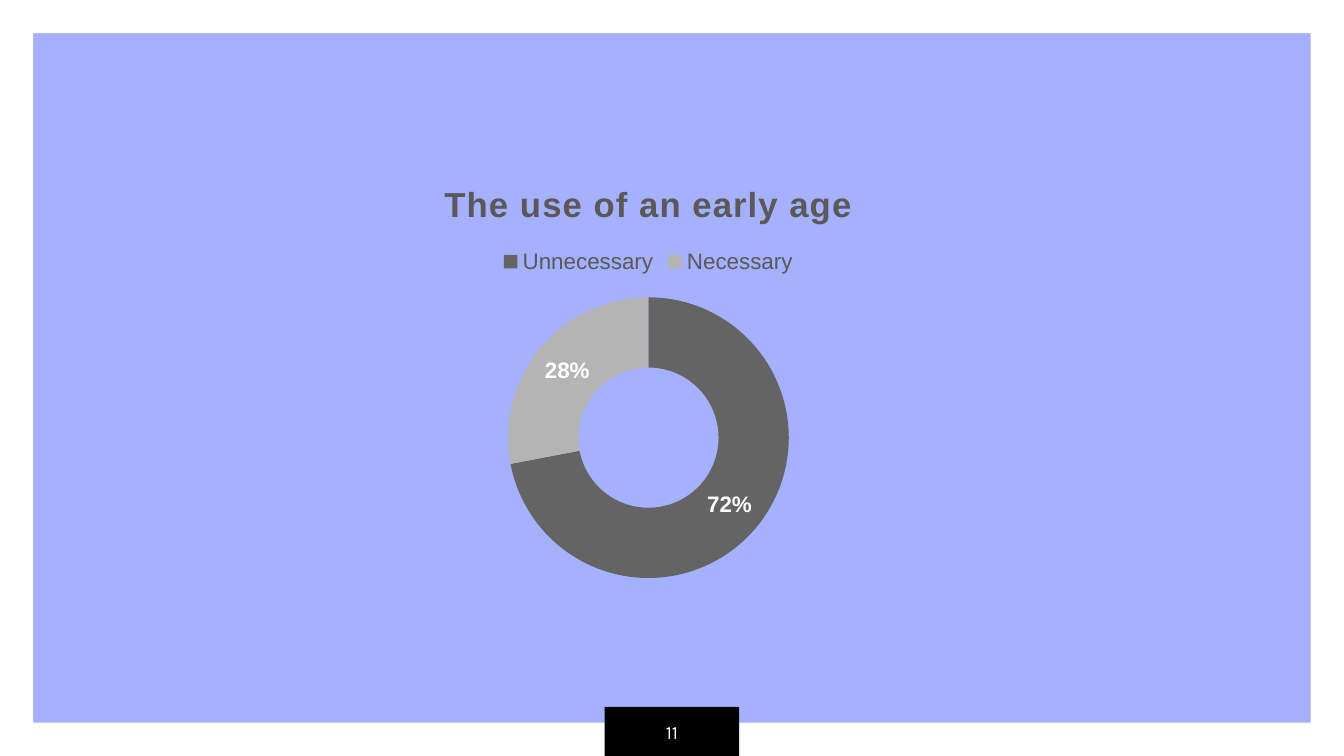
import pptx
import pptx.chart.data
import pptx.dml.color
import pptx.enum.chart
import pptx.enum.shapes
import pptx.enum.text
import pptx.util

Inches = pptx.util.Inches
SHAPES = pptx.enum.shapes.MSO_SHAPE

COLORS = {
    "background": "A5B0FE",
    "white": "FFFFFF",
    "black": "000000",
    "text": "595959",
    "Unnecessary": "646464",
    "Necessary": "B4B4B4",
}
SHARES = {"Unnecessary": 72, "Necessary": 28}
CHART_TITLE = "The use of an early age"
WIDTH = 10
HEIGHT = WIDTH * 9 / 16


def paint(fill, color):
    fill.solid()
    fill.fore_color.rgb = pptx.dml.color.RGBColor.from_string(COLORS[color])


def style_font(font, size, color, bold=False, name="Arial"):
    font.name = name
    font.size = pptx.util.Pt(size)
    font.bold = bold
    font.color.rgb = pptx.dml.color.RGBColor.from_string(COLORS[color])


def add_plain_shape(slide, kind, box, color):
    shape = slide.shapes.add_shape(kind, *map(Inches, box))
    shape.shadow.inherit = False
    paint(shape.fill, color)
    shape.line.fill.background()
    return shape


def add_frame(slide, box):
    frame = add_plain_shape(slide, SHAPES.FRAME, box, "white")
    frame.adjustments[0] = 0.044


def add_page_number(slide, box, number):
    add_plain_shape(slide, SHAPES.RECTANGLE, box, "black")
    text_frame = slide.shapes.add_textbox(*map(Inches, box)).text_frame
    text_frame.word_wrap = True
    text_frame.margin_top = text_frame.margin_bottom = Inches(0.1)
    text_frame.vertical_anchor = pptx.enum.text.MSO_ANCHOR.MIDDLE
    paragraph = text_frame.paragraphs[0]
    paragraph.alignment = pptx.enum.text.PP_ALIGN.CENTER
    run = paragraph.add_run()
    run.text = number
    style_font(run.font, 10, "white", name="Karla")


def add_doughnut(slide, box):
    data = pptx.chart.data.CategoryChartData()
    data.categories = list(SHARES)
    data.add_series(CHART_TITLE, list(SHARES.values()))
    chart = slide.shapes.add_chart(
        pptx.enum.chart.XL_CHART_TYPE.DOUGHNUT, *map(Inches, box), data).chart
    style_font(chart.font, 10, "black")

    chart.has_title = True
    run = chart.chart_title.text_frame.paragraphs[0].add_run()
    run.text = CHART_TITLE
    style_font(run.font, 18.6, "text", bold=True)
    run.font._element.set("spc", "50")
    chart.chart_title.include_in_layout = False

    chart.has_legend = True
    chart.legend.position = pptx.enum.chart.XL_LEGEND_POSITION.TOP
    chart.legend.include_in_layout = False
    style_font(chart.legend.font, 12, "text")

    plot = chart.plots[0]
    plot.vary_by_categories = True
    for index, category in enumerate(SHARES):
        point_format = plot.series[0].points[index].format
        paint(point_format.fill, category)
        point_format.line.fill.background()

    labels = plot.series[0].data_labels
    labels.show_percentage = True
    labels.show_value = False
    labels.number_format = "0%"
    labels.number_format_is_linked = False
    style_font(labels.font, 12, "white", bold=True)


def main():
    presentation = pptx.Presentation()
    presentation.slide_width = Inches(WIDTH)
    presentation.slide_height = Inches(HEIGHT)
    slide = presentation.slides.add_slide(presentation.slide_layouts[6])
    paint(slide.background.fill, "background")
    add_frame(slide, (0, 0, WIDTH, HEIGHT))
    add_page_number(slide, (4.5, 5.26, 1, 0.37), "11")
    add_doughnut(slide, (2.7, 1.18, 4.25, 3.26))
    presentation.save("out.pptx")


if __name__ == "__main__":
    main()
